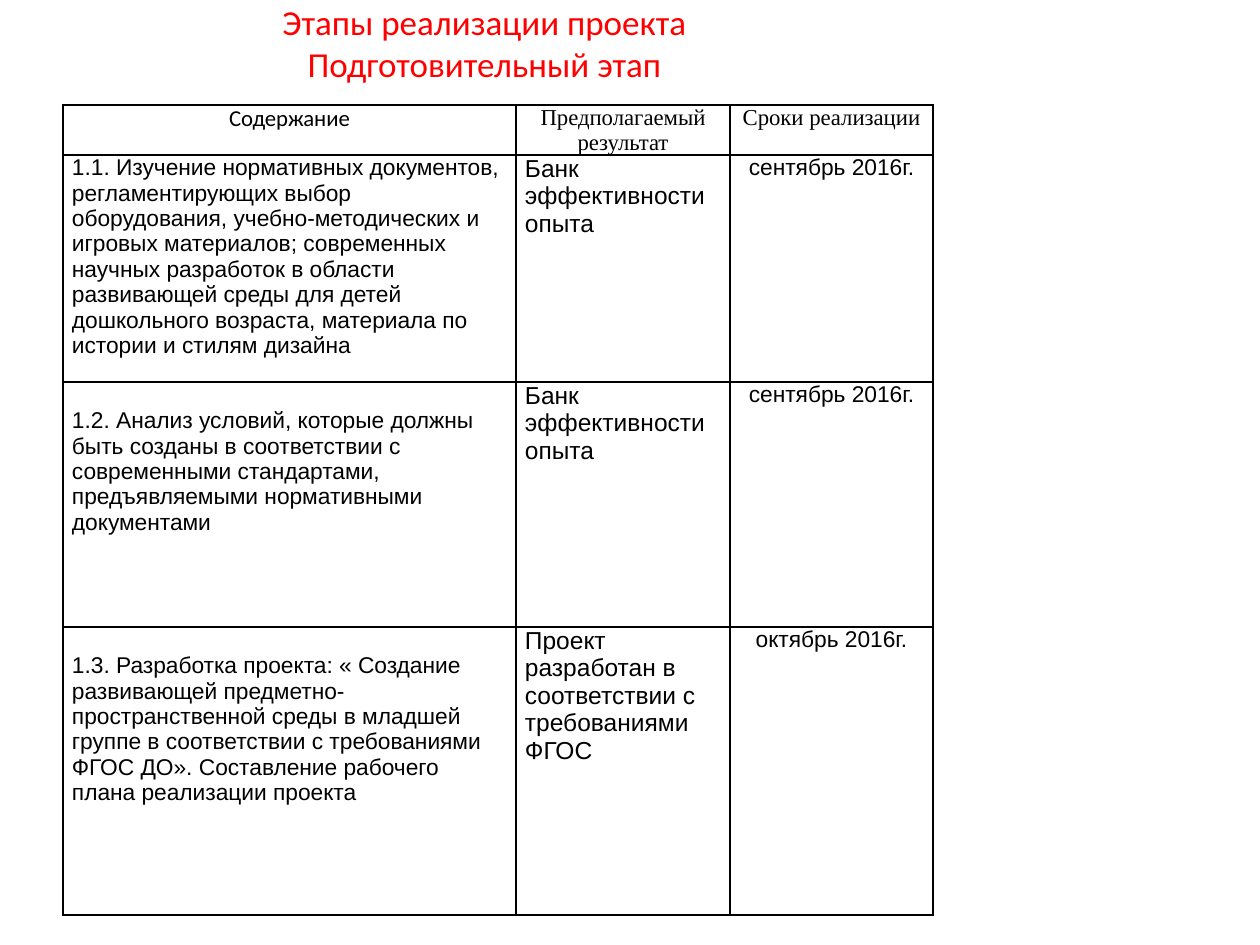
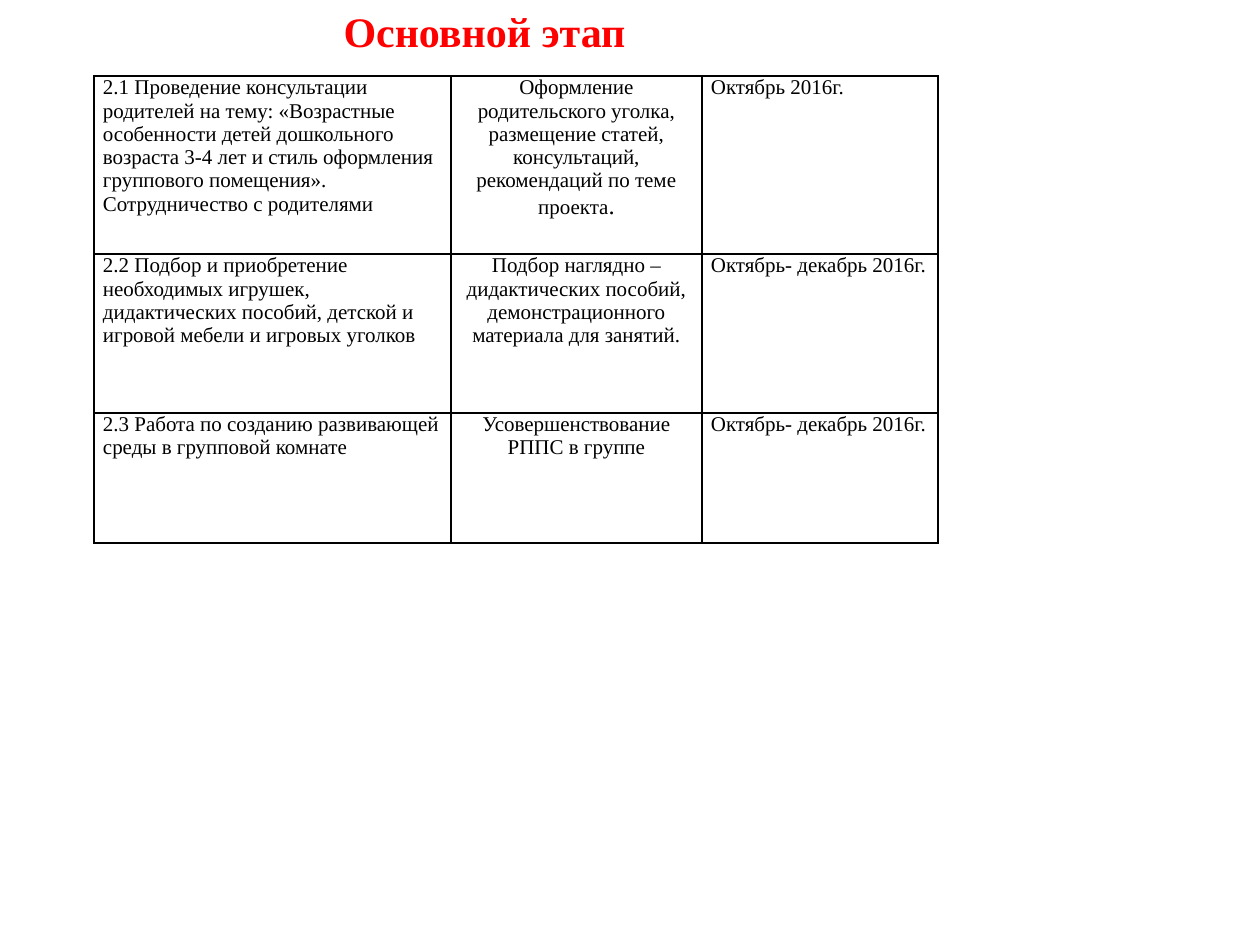
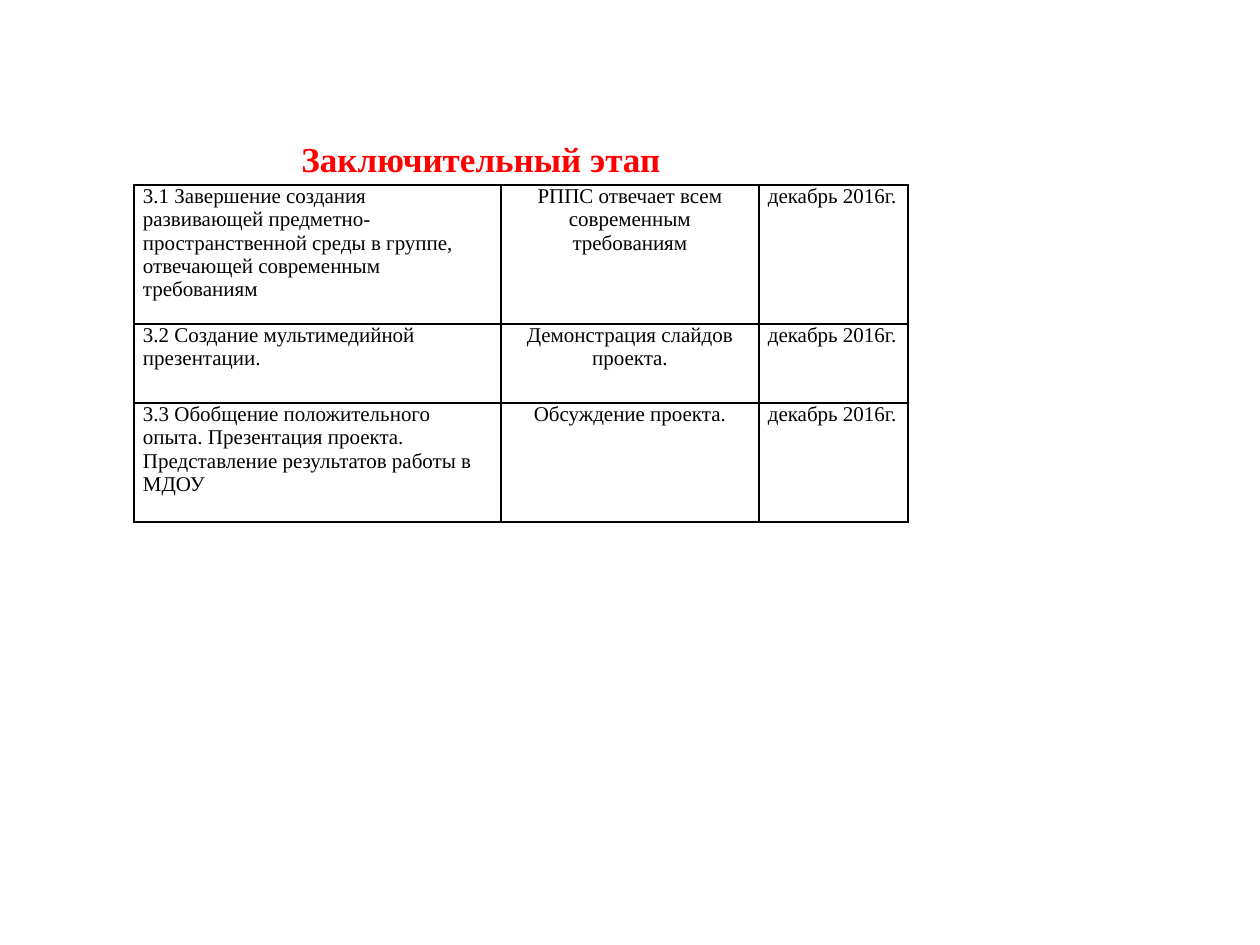
"""Build three slides that list the stages of a kindergarten project."""
from lxml.etree import SubElement
from pptx import Presentation
from pptx.dml.color import RGBColor
from pptx.enum.text import MSO_ANCHOR, MSO_AUTO_SIZE, PP_ALIGN
from pptx.oxml.ns import qn
from pptx.util import Emu, Pt

PIXELS_PER_INCH = 126
TITLE_ONLY = 5
COLORS = {"title": "FF0000", "text": "000000", "border": "000000", "page": "FFFFFF"}
SERIF = "Times New Roman"
LEFT, CENTER = PP_ALIGN.LEFT, PP_ALIGN.CENTER

HEADING = {"name": SERIF, "size": 13}
BODY = {"name": "Arial", "size": 13}
RESULT = {"name": "Arial", "size": 14}
SERIF_BODY = {"name": SERIF, "size": 12}
SERIF_LARGE = {"name": SERIF, "size": 14}

PREPARATION_HEADER = [
    ("Содержание", {"name": "Calibri", "size": 13}),
    ("Предполагаемый результат", HEADING),
    ("Сроки реализации", HEADING),
]
PREPARATION = [
    ("1.1. Изучение нормативных документов, регламентирующих выбор оборудования, "
     "учебно-методических и игровых материалов; современных научных разработок в области "
     "развивающей среды для детей дошкольного возраста, материала по истории и стилям дизайна",
     "Банк эффективности опыта", "сентябрь 2016г."),
    ("1.2. Анализ условий, которые должны быть созданы в соответствии с современными "
     "стандартами, предъявляемыми нормативными документами",
     "Банк эффективности опыта", "сентябрь 2016г."),
    ("1.3. Разработка проекта: « Создание развивающей предметно-пространственной среды "
     "в младшей группе в соответствии с требованиями ФГОС ДО». Составление рабочего плана "
     "реализации проекта",
     "Проект разработан в соответствии с требованиями ФГОС", "октябрь 2016г."),
]
MAIN_STAGE = [
    ("2.1 Проведение консультации родителей на тему: «Возрастные особенности детей "
     "дошкольного возраста 3-4 лет и стиль оформления группового помещения». "
     "Сотрудничество с родителями",
     "Оформление родительского уголка, размещение статей, консультаций, "
     "рекомендаций по теме проекта", "Октябрь 2016г."),
    ("2.2 Подбор и приобретение необходимых игрушек, дидактических пособий, детской и "
     "игровой мебели и игровых уголков",
     "Подбор наглядно – дидактических пособий, демонстрационного материала для занятий.",
     "Октябрь- декабрь 2016г."),
    ("2.3 Работа по созданию развивающей среды в групповой комнате",
     "Усовершенствование РППС в группе", "Октябрь- декабрь 2016г."),
]
FINAL_STAGE = [
    ("3.1 Завершение создания развивающей предметно-пространственной среды в группе, "
     "отвечающей современным требованиям",
     "РППС отвечает всем современным требованиям", "декабрь 2016г."),
    ("3.2 Создание мультимедийной презентации.",
     "Демонстрация слайдов проекта.", "декабрь 2016г."),
    ("3.3 Обобщение положительного опыта. Презентация проекта. Представление результатов "
     "работы в МДОУ",
     "Обсуждение проекта.", "декабрь 2016г."),
]


def px(length):
    """Turn pixels into EMU."""
    return Emu(round(length * 914400 / PIXELS_PER_INCH))


def set_values(target, values):
    """Set each attribute named in a dict."""
    for name, value in values.items():
        setattr(target, name, value)


def add_span(para, text, font, color="text"):
    """Add a formatted run to a paragraph."""
    span = para.add_run()
    span.text = text
    set_values(span.font, {"bold": False, **font, "size": Pt(font["size"])})
    span.font.color.rgb = RGBColor.from_string(COLORS[color])


def add_page(deck, lines, place, font, anchor, top_inset, bottom_inset):
    """Add a slide and place its red title."""
    page = deck.slides.add_slide(deck.slide_layouts[TITLE_ONLY])
    page.background.fill.solid()
    page.background.fill.fore_color.rgb = RGBColor.from_string(COLORS["page"])
    title = page.shapes.title
    set_values(title, dict(zip(("left", "top", "width", "height"), map(px, place))))
    frame = title.text_frame
    set_values(frame, {"word_wrap": True, "auto_size": MSO_AUTO_SIZE.NONE,
                       "vertical_anchor": anchor, "margin_top": px(top_inset),
                       "margin_bottom": px(bottom_inset)})
    for index, line in enumerate(lines):
        para = frame.add_paragraph() if index else frame.paragraphs[0]
        para.alignment = CENTER
        add_span(para, line, font, "title")
    return page


def add_borders(cell):
    """Draw a thin line on each side of a cell."""
    properties = cell._tc.get_or_add_tcPr()
    for side in ("a:lnL", "a:lnR", "a:lnT", "a:lnB"):
        line = SubElement(properties, qn(side), w=str(Pt(1)))
        fill = SubElement(line, qn("a:solidFill"))
        SubElement(fill, qn("a:srgbClr"), val=COLORS["border"])


def fill_cell(cell, text, font, alignment, top_inset=0):
    """Write and format one table cell."""
    add_borders(cell)
    cell.fill.background()
    set_values(cell, {"margin_left": px(9), "margin_right": px(9),
                      "margin_top": px(top_inset), "margin_bottom": 0})
    para = cell.text_frame.paragraphs[0]
    para.alignment = alignment
    add_span(para, text, font)


def add_grid(page, left, top, widths, heights):
    """Add a plain table with the given columns and rows."""
    grid = page.shapes.add_table(len(heights), len(widths), px(left), px(top),
                                 px(sum(widths)), px(sum(heights))).table
    set_values(grid, {"first_row": False, "horz_banding": False})
    for column, width in zip(grid.columns, widths):
        column.width = px(width)
    for row, height in zip(grid.rows, heights):
        row.height = px(height)
    return grid


def fill_rows(grid, rows, fonts, alignments, first=0, insets=(0, 0, 0)):
    """Write stage rows, with a top inset for each first cell."""
    for index, (texts, inset) in enumerate(zip(rows, insets), first):
        for column, text in enumerate(texts):
            fill_cell(grid.cell(index, column), text, fonts[column],
                      alignments[column], 0 if column else inset)


def add_preparation(deck):
    """Add the preparatory stage."""
    page = add_page(deck, ["Этапы реализации проекта", "Подготовительный этап"],
                    (63, 16, 843, 89), {"name": "Calibri", "size": 20},
                    MSO_ANCHOR.MIDDLE, 6, 42)
    grid = add_grid(page, 63, 105, (453, 214, 203), (49, 227, 245, 288))
    for column, (text, font) in enumerate(PREPARATION_HEADER):
        fill_cell(grid.cell(0, column), text, font, CENTER)
    fill_rows(grid, PREPARATION, (BODY, RESULT, BODY), (LEFT, LEFT, CENTER), 1, (0, 26, 26))


def add_main_stage(deck):
    """Add the main stage."""
    page = add_page(deck, ["Основной этап"], (63, 16, 843, 100),
                    {"name": SERIF, "size": 24, "bold": True}, MSO_ANCHOR.MIDDLE, 6, 76)
    grid = add_grid(page, 94, 76, (357, 251, 236), (178, 159, 130))
    fill_rows(grid, MAIN_STAGE, [SERIF_BODY] * 3, (LEFT, CENTER, LEFT))
    add_span(grid.cell(0, 1).text_frame.paragraphs[0], ".", SERIF_LARGE)


def add_final_stage(deck):
    """Add the final stage."""
    page = add_page(deck, ["Заключительный этап"], (263, 127, 436, 97),
                    {"name": SERIF, "size": 20, "bold": True}, MSO_ANCHOR.TOP, 10, 6)
    grid = add_grid(page, 134, 185, (367, 258, 149), (139, 79, 119))
    fill_rows(grid, FINAL_STAGE, [SERIF_BODY] * 3, (LEFT, CENTER, LEFT))


def main():
    """Build and save the deck."""
    deck = Presentation()
    set_values(deck, {"slide_width": px(1260), "slide_height": px(945)})
    for add_stage in (add_preparation, add_main_stage, add_final_stage):
        add_stage(deck)
    deck.save("out.pptx")


if __name__ == "__main__":
    main()
